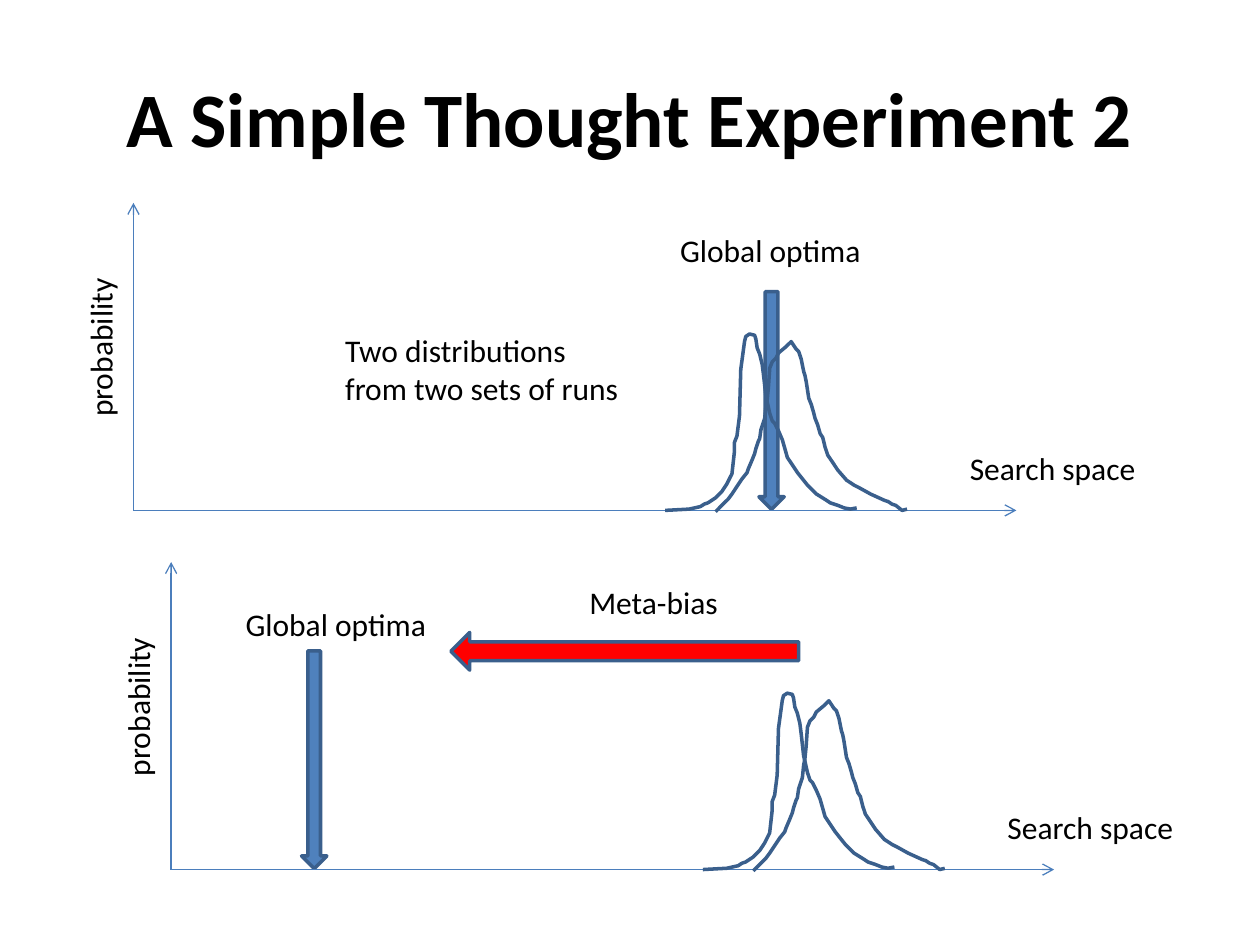
from dataclasses import dataclass

import pptx
import pptx.dml.color
import pptx.enum.shapes
import pptx.enum.text
import pptx.util
from lxml import etree
from pptx.oxml.ns import qn

Cm = pptx.util.Cm
Pt = pptx.util.Pt
RGBColor = pptx.dml.color.RGBColor
MSO_SHAPE = pptx.enum.shapes.MSO_SHAPE
PP_ALIGN = pptx.enum.text.PP_ALIGN

BLACK = RGBColor(0x00, 0x00, 0x00)
AXIS_BLUE = RGBColor(0x4B, 0x7E, 0xBC)
ARROW_BLUE = RGBColor(0x4F, 0x81, 0xBD)
OUTLINE_BLUE = RGBColor(0x3A, 0x5F, 0x8C)
RED = RGBColor(0xFF, 0x00, 0x00)
FONT = "Calibri"

# Curve points: hundredths of an inch right of and above the axis corner
CURVE_UNIT = Cm(2.54) / 100
LEFT_CURVE = [
    (422, 0), (441, 1), (450, 3), (453, 5), (456, 6), (462, 10), (467, 15),
    (471, 21), (474, 27), (475, 29), (477, 47), (477, 54), (479, 59),
    (481, 75), (482, 112), (485, 134), (486, 138), (489, 140), (493, 139),
    (494, 136), (495, 129), (497, 124), (499, 116), (500, 108), (502, 90),
    (503, 86), (505, 77), (507, 71), (509, 69), (512, 63), (515, 56),
    (517, 49), (519, 42), (521, 39), (527, 30), (531, 25), (535, 20),
    (540, 15), (542, 13), (550, 8), (553, 6), (559, 4), (564, 2),
    (569, 1), (574, 2),
]
RIGHT_CURVE = [
    (462, -1), (469, 6), (472, 9), (475, 13), (479, 19), (483, 25),
    (487, 30), (488, 33), (491, 40), (493, 45), (494, 49), (496, 55),
    (497, 57), (498, 64), (500, 70), (501, 73), (502, 83), (503, 88),
    (504, 98), (505, 113), (507, 118), (510, 121), (512, 125), (518, 130),
    (522, 134), (526, 128), (528, 126), (530, 120), (531, 115), (532, 110),
    (533, 107), (534, 102), (536, 89), (538, 84), (540, 77), (541, 73),
    (543, 68), (545, 61), (547, 58), (549, 50), (550, 47), (551, 44),
    (555, 38), (559, 32), (566, 24), (572, 20), (576, 18), (585, 13),
    (596, 8), (599, 7), (602, 5), (605, 4), (610, 0), (614, 1),
]


@dataclass
class Label:
    text: str
    left: float
    top: float
    width: float
    height: float = 1.02
    rotation: float = 0
    size: float = 18
    bold: bool = False
    wrap: bool = False
    align: PP_ALIGN = PP_ALIGN.LEFT


@dataclass
class BlockArrow:
    kind: MSO_SHAPE
    left: float
    top: float
    width: float
    height: float
    color: RGBColor = ARROW_BLUE


@dataclass
class Plot:
    """Position of the axis corner, in centimetres."""
    left: float
    base: float


PLOTS = [Plot(2.69, 10.29), Plot(3.45, 17.53)]
AXIS_WIDTH, AXIS_HEIGHT = 17.8, 6.2

BLOCK_ARROWS = [
    BlockArrow(MSO_SHAPE.DOWN_ARROW, 15.3, 5.88, 0.51, 4.39),
    BlockArrow(MSO_SHAPE.DOWN_ARROW, 6.08, 13.12, 0.51, 4.39),
    BlockArrow(MSO_SHAPE.LEFT_ARROW, 9.09, 12.75, 7.01, 0.76, RED),
]
LABELS = [
    Label("A Simple Thought Experiment 2", 1.27, 0.76, 22.86, 3.18,
          size=44, bold=True, wrap=True, align=PP_ALIGN.CENTER),
    Label("Global optima", 13.46, 4.52, 4.19),
    Label("Global optima", 4.7, 12.07, 4.19),
    Label("Two distributions\nfrom two sets of runs", 6.71, 6.53, 6.07, 1.8),
    Label("Meta-bias", 11.63, 11.63, 3.86),
]


def draw_label(page, label: Label) -> None:
    box = page.shapes.add_textbox(Cm(label.left), Cm(label.top),
                                  Cm(label.width), Cm(label.height))
    box.rotation = label.rotation
    frame = box.text_frame
    frame.word_wrap = label.wrap
    frame.vertical_anchor = pptx.enum.text.MSO_ANCHOR.MIDDLE
    frame.text = label.text
    for para in frame.paragraphs:
        para.alignment = label.align
        for span in para.runs:
            span.font.name = FONT
            span.font.size = Pt(label.size)
            span.font.bold = label.bold
            span.font.color.rgb = BLACK


def draw_axis(page, plot: Plot, width: float, height: float) -> None:
    axis = page.shapes.add_connector(
        pptx.enum.shapes.MSO_CONNECTOR.STRAIGHT, Cm(plot.left), Cm(plot.base),
        Cm(plot.left + width), Cm(plot.base - height))
    axis.line.color.rgb = AXIS_BLUE
    axis.line.width = Pt(0.75)
    etree.SubElement(axis.line._get_or_add_ln(), qn("a:tailEnd"), type="arrow")
    etree.SubElement(axis._element.spPr, qn("a:effectLst"))


def outline(shape) -> None:
    shape.shadow.inherit = False
    shape.line.color.rgb = OUTLINE_BLUE
    shape.line.width = Pt(2)


def draw_curve(page, plot: Plot, points: list[tuple[int, int]]) -> None:
    start, *rest = [(x, -height) for x, height in points]
    builder = page.shapes.build_freeform(*start, scale=CURVE_UNIT)
    builder.add_line_segments(rest, close=False)
    curve = builder.convert_to_shape(Cm(plot.left), Cm(plot.base))
    curve.fill.background()
    outline(curve)


def draw_block_arrow(page, arrow: BlockArrow) -> None:
    shape = page.shapes.add_shape(arrow.kind, Cm(arrow.left), Cm(arrow.top),
                                  Cm(arrow.width), Cm(arrow.height))
    shape.fill.solid()
    shape.fill.fore_color.rgb = arrow.color
    outline(shape)


def draw_plot(page, plot: Plot) -> None:
    draw_axis(page, plot, AXIS_WIDTH, 0)
    draw_axis(page, plot, 0, AXIS_HEIGHT)
    for points in (LEFT_CURVE, RIGHT_CURVE):
        draw_curve(page, plot, points)
    draw_label(page, Label("Search space", plot.left + 16.61,
                           plot.base - 1.37, 3.89))
    draw_label(page, Label("probability", plot.left - 2.34,
                           plot.base - 3.81, 3.33, rotation=270))


def main() -> None:
    deck = pptx.Presentation()
    deck.slide_width, deck.slide_height = Cm(25.4), Cm(19.05)
    page = deck.slides.add_slide(deck.slide_layouts[6])

    # Block arrows lie behind the curves
    for arrow in BLOCK_ARROWS:
        draw_block_arrow(page, arrow)
    # Axes, distributions and axis names
    for plot in PLOTS:
        draw_plot(page, plot)
    # Title and annotations
    for label in LABELS:
        draw_label(page, label)

    deck.save("out.pptx")


if __name__ == "__main__":
    main()
